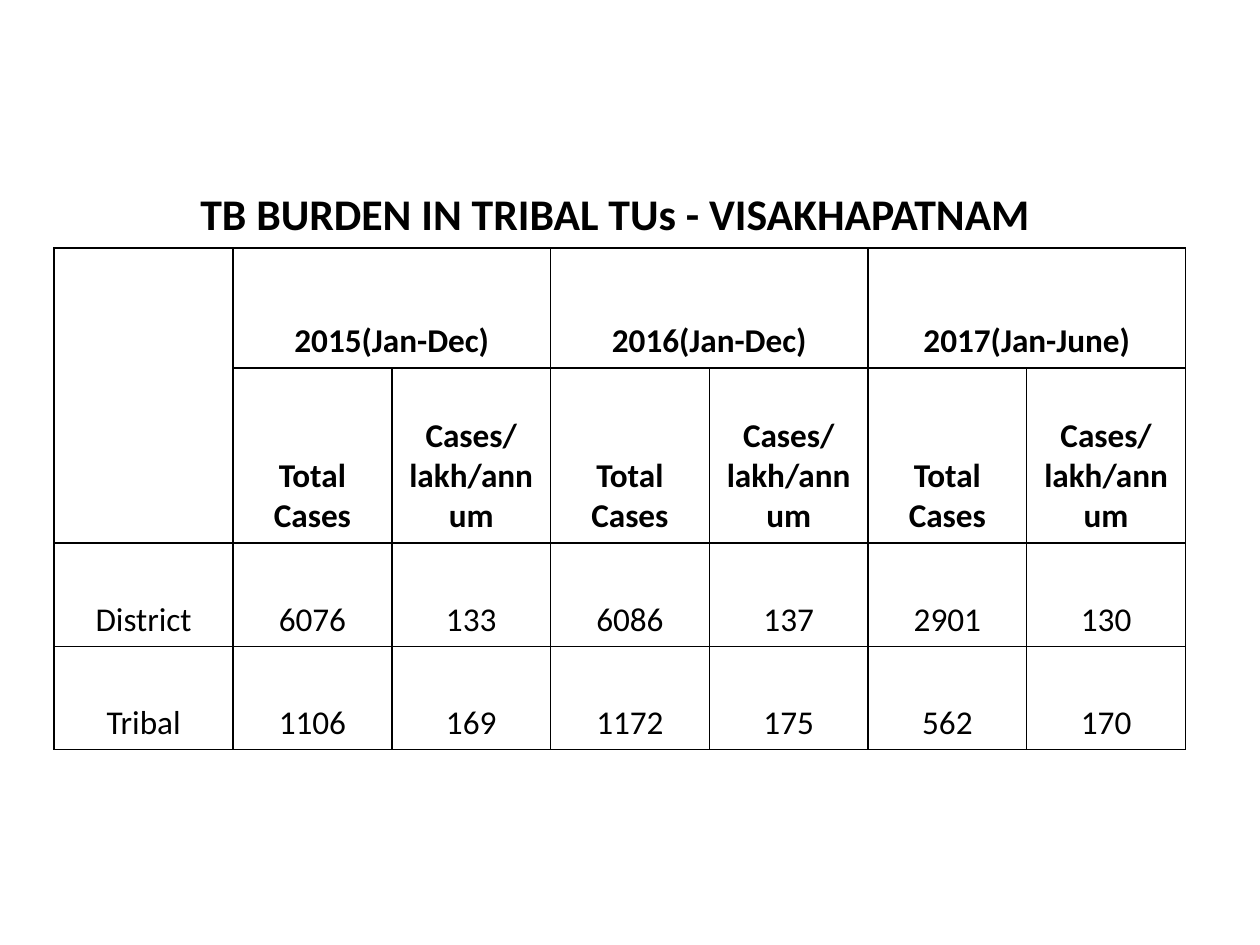
import pptx
import pptx.dml.color
import pptx.enum.text
import pptx.oxml
import pptx.oxml.ns
import pptx.util
from pptx.util import Inches

TITLE = "TB BURDEN IN TRIBAL TUs - VISAKHAPATNAM "
PERIODS = ["2015(Jan-Dec)", "2016(Jan-Dec)", "2017(Jan-June)"]
MEASURES = ["Total Cases", "Cases/ lakh/annum"]
DATA = [
    ["District", "6076", "133", "6086", "137", "2901", "130"],
    ["Tribal", "1106", "169", "1172", "175", "562", "170"],
]
COL_WIDTHS = [1.42] + [1.26] * 6
ROW_HEIGHTS = [0.74, 0.95, 1.39, 0.82, 0.82]
LEFT, TOP = 0.43, 1.23
HEADER_ROWS = 3
BLACK = "000000"


def color(value):
    return pptx.dml.color.RGBColor.from_string(value)


def set_borders(cell, sides):
    """Draw 1 pt lines on the given sides and leave the others empty."""
    tc_pr = cell._tc.get_or_add_tcPr()
    for side in "LRTB":
        fill = (f'<a:solidFill><a:srgbClr val="{BLACK}"/></a:solidFill>'
                if side in sides else "<a:noFill/>")
        tc_pr.append(pptx.oxml.parse_xml(
            f'<a:ln{side} {pptx.oxml.ns.nsdecls("a")} w="12700">{fill}</a:ln{side}>'))


def set_text(cell, text, size, bold):
    cell.text_frame.text = text
    p = cell.text_frame.paragraphs[0]
    p.alignment = pptx.enum.text.PP_ALIGN.CENTER
    for r in p.runs:
        r.font.name = "Calibri"
        r.font.size = pptx.util.Pt(size)
        r.font.bold = bold
        r.font.color.rgb = color(BLACK)


prs = pptx.Presentation()
prs.slide_width, prs.slide_height = Inches(10), Inches(7.5)
slide = prs.slides.add_slide(prs.slide_layouts[6])

period_row = [""]
for period in PERIODS:
    period_row += [period, ""]
rows = [[TITLE] + [""] * 6, period_row, [""] + MEASURES * len(PERIODS)] + DATA

table = slide.shapes.add_table(
    len(ROW_HEIGHTS), len(COL_WIDTHS), Inches(LEFT), Inches(TOP),
    Inches(sum(COL_WIDTHS)), Inches(sum(ROW_HEIGHTS))).table
table.first_row = table.horz_banding = False
for column, width in zip(table.columns, COL_WIDTHS):
    column.width = Inches(width)
for row, height in zip(table.rows, ROW_HEIGHTS):
    row.height = Inches(height)

for i, texts in enumerate(rows):
    for j, text in enumerate(texts):
        cell = table.cell(i, j)
        set_borders(cell, "LRTB" if i else "B")
        cell.fill.background()
        cell.vertical_anchor = pptx.enum.text.MSO_ANCHOR.BOTTOM
        if text:
            set_text(cell, text, 19 if i else 25, i < HEADER_ROWS)

table.cell(0, 0).merge(table.cell(0, 6))
table.cell(1, 0).merge(table.cell(2, 0))
for j in range(1, len(COL_WIDTHS), len(MEASURES)):
    table.cell(1, j).merge(table.cell(1, j + 1))

prs.save("out.pptx")
